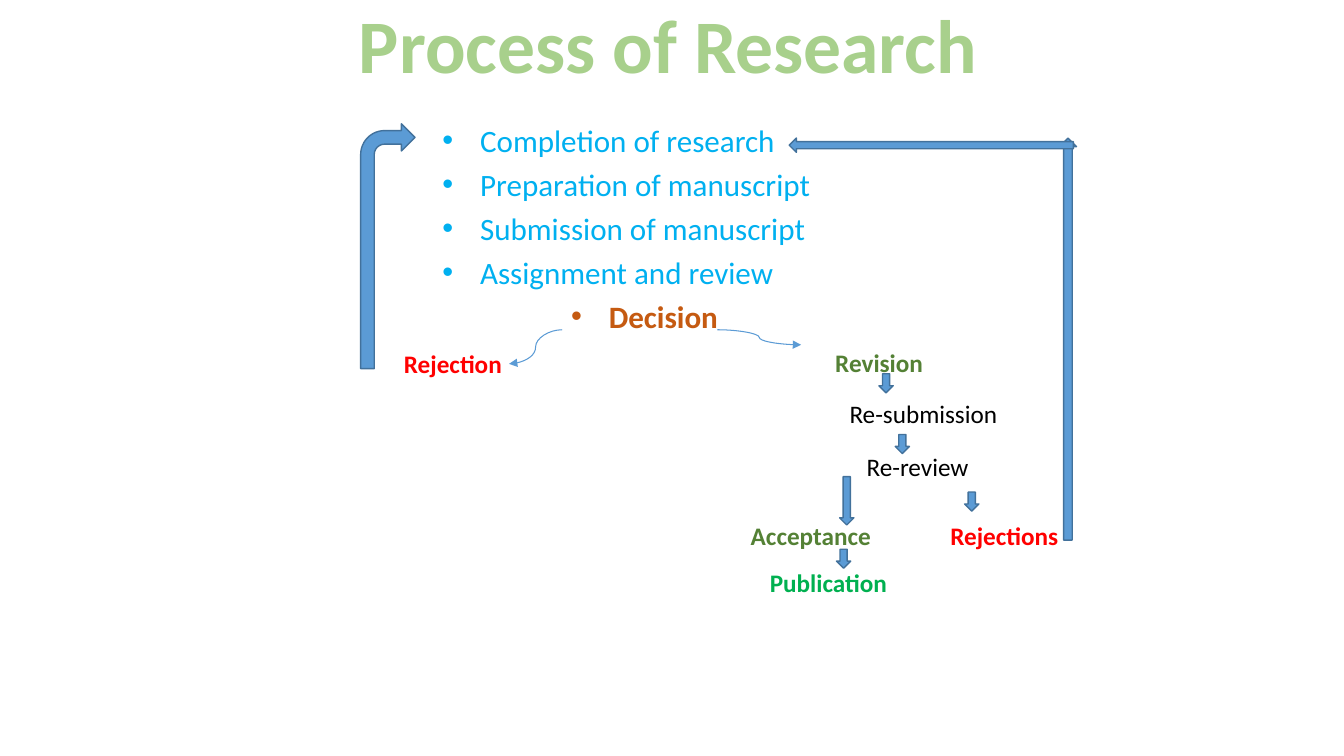
"""Build the "Process of Research" flow slide."""
from lxml import etree
from pptx import Presentation
from pptx.dml.color import RGBColor
from pptx.enum.shapes import MSO_CONNECTOR, MSO_SHAPE
from pptx.enum.text import MSO_ANCHOR, PP_ALIGN
from pptx.oxml.ns import qn
from pptx.util import Cm, Pt

CURVE = MSO_CONNECTOR.CURVE
DOWN, UP = MSO_SHAPE.DOWN_ARROW, MSO_SHAPE.UP_ARROW
LEFT_ARROW, BENT = MSO_SHAPE.LEFT_ARROW, MSO_SHAPE.BENT_ARROW
LEFT, CENTER, JUSTIFY = PP_ALIGN.LEFT, PP_ALIGN.CENTER, PP_ALIGN.JUSTIFY
TOP, BOTTOM = MSO_ANCHOR.TOP, MSO_ANCHOR.BOTTOM

THEME = {
    "font": "Calibri",
    "title_size": 54, "step_size": 22.2, "label_size": 18,
    "title": "A8D08C", "step": "00B0F0", "decision": "C55A11",
    "reject": "FF0000", "accept": "548135", "publish": "00B050",
    "plain": "000000", "arrow": "5B9BD5", "outline": "42719B",
}

TITLE = ("Process of Research", (0, 0, 33.68, 2.39))
STEPS_BOX = (10.9, 3.12, 10.69, 5.54)
STEPS = ["Completion of research", "Preparation of manuscript",
         "Submission of manuscript", "Assignment and review"]
DECISION = "Decision"

LABEL_HEIGHT = 1.02
LABELS = [
    ("Rejection", 9.93, 8.66, 3.48, "reject", True),
    ("Revision", 20.8, 8.64, 3.5, "accept", True),
    ("Re-submission", 21.16, 9.91, 4.62, "plain", False),
    ("Re-review", 21.59, 11.25, 3.3, "plain", False),
    ("Rejections", 23.7, 12.98, 3.76, "reject", True),
    ("Acceptance", 18.67, 12.98, 4.34, "accept", True),
    ("Publication", 19.15, 14.17, 3.81, "publish", True),
]

DECISION_CURVES = [(18.08, 8.31, 20.19, 8.69), (14.17, 8.31, 12.83, 9.17)]

DOWN_WIDTH, SHORT, LONG = 0.36, 0.48, 1.22
DOWN_ARROWS = [(22.15, 9.42, SHORT), (22.56, 10.95, SHORT),
               (24.31, 12.4, SHORT), (21.16, 12.01, LONG),
               (21.08, 13.84, SHORT)]
RETURN_ARROWS = [
    (BENT, (9.09, 3.12, 1.37, 6.17), (0.25, 0.25, 0.25, 0.44)),
    (UP, (26.7, 3.48, 0.43, 10.13), (0.5, 0.5)),
    (LEFT_ARROW, (19.89, 3.48, 7.16, 0.36), (0.5, 0.5)),
]


def color(name):
    return RGBColor.from_string(THEME[name])


def add_box(s, box, anchor=TOP):
    tf = s.shapes.add_textbox(*map(Cm, box)).text_frame
    tf.word_wrap = True
    tf.vertical_anchor = anchor
    return tf


def write(p, text, *, size, ink, bold=False, align=LEFT, spacing=1.0, before=0):
    p.alignment = align
    p.line_spacing = spacing
    p.space_before = Pt(before)
    r = p.add_run()
    r.text = text
    r.font.name = THEME["font"]
    r.font.size = Pt(THEME[size])
    r.font.bold = bold
    r.font.color.rgb = color(ink)


def add_bullet(p, ink):
    pPr = p._p.get_or_add_pPr()
    pPr.set("marL", str(Cm(0.95)))
    pPr.set("indent", str(Cm(-0.95)))
    clr = etree.SubElement(pPr, qn("a:buClr"))
    etree.SubElement(clr, qn("a:srgbClr"), val=THEME[ink])
    etree.SubElement(pPr, qn("a:buFont"), typeface="Arial")
    etree.SubElement(pPr, qn("a:buChar"), char="•")


def add_steps(s):
    tf = add_box(s, STEPS_BOX)
    rows = [(step, "step", False, JUSTIFY) for step in STEPS]
    rows.append((DECISION, "decision", True, CENTER))
    for i, (text, ink, bold, align) in enumerate(rows):
        p = tf.add_paragraph() if i else tf.paragraphs[0]
        write(p, text, size="step_size", ink=ink, bold=bold, align=align,
              spacing=0.8, before=10 if i else 0)
        add_bullet(p, ink)


def add_curve(s, ends):
    line = s.shapes.add_connector(CURVE, *map(Cm, ends))
    line.line.color.rgb = color("arrow")
    line.line.width = Pt(0.75)
    etree.SubElement(line.line._get_or_add_ln(), qn("a:tailEnd"), type="triangle")
    etree.SubElement(line._element.spPr, qn("a:effectLst"))


def add_arrow(s, kind, box, adjustments):
    arrow = s.shapes.add_shape(kind, *map(Cm, box))
    for i, value in enumerate(adjustments):
        arrow.adjustments[i] = value
    arrow.shadow.inherit = False
    arrow.fill.solid()
    arrow.fill.fore_color.rgb = color("arrow")
    arrow.line.color.rgb = color("outline")
    arrow.line.width = Pt(1)


def main():
    prs = Presentation()
    prs.slide_width, prs.slide_height = Cm(33.87), Cm(19.05)
    s = prs.slides.add_slide(prs.slide_layouts[6])

    text, box = TITLE
    write(add_box(s, box, BOTTOM).paragraphs[0], text, size="title_size",
          ink="title", bold=True, align=CENTER, spacing=0.9)
    add_steps(s)
    for text, x, y, width, ink, bold in LABELS:
        tf = add_box(s, (x, y, width, LABEL_HEIGHT))
        write(tf.paragraphs[0], text, size="label_size", ink=ink, bold=bold)
    for ends in DECISION_CURVES:
        add_curve(s, ends)
    for x, y, height in DOWN_ARROWS:
        add_arrow(s, DOWN, (x, y, DOWN_WIDTH, height), (0.5, 0.5))
    for kind, box, adjustments in RETURN_ARROWS:
        add_arrow(s, kind, box, adjustments)
    prs.save("out.pptx")


if __name__ == "__main__":
    main()
